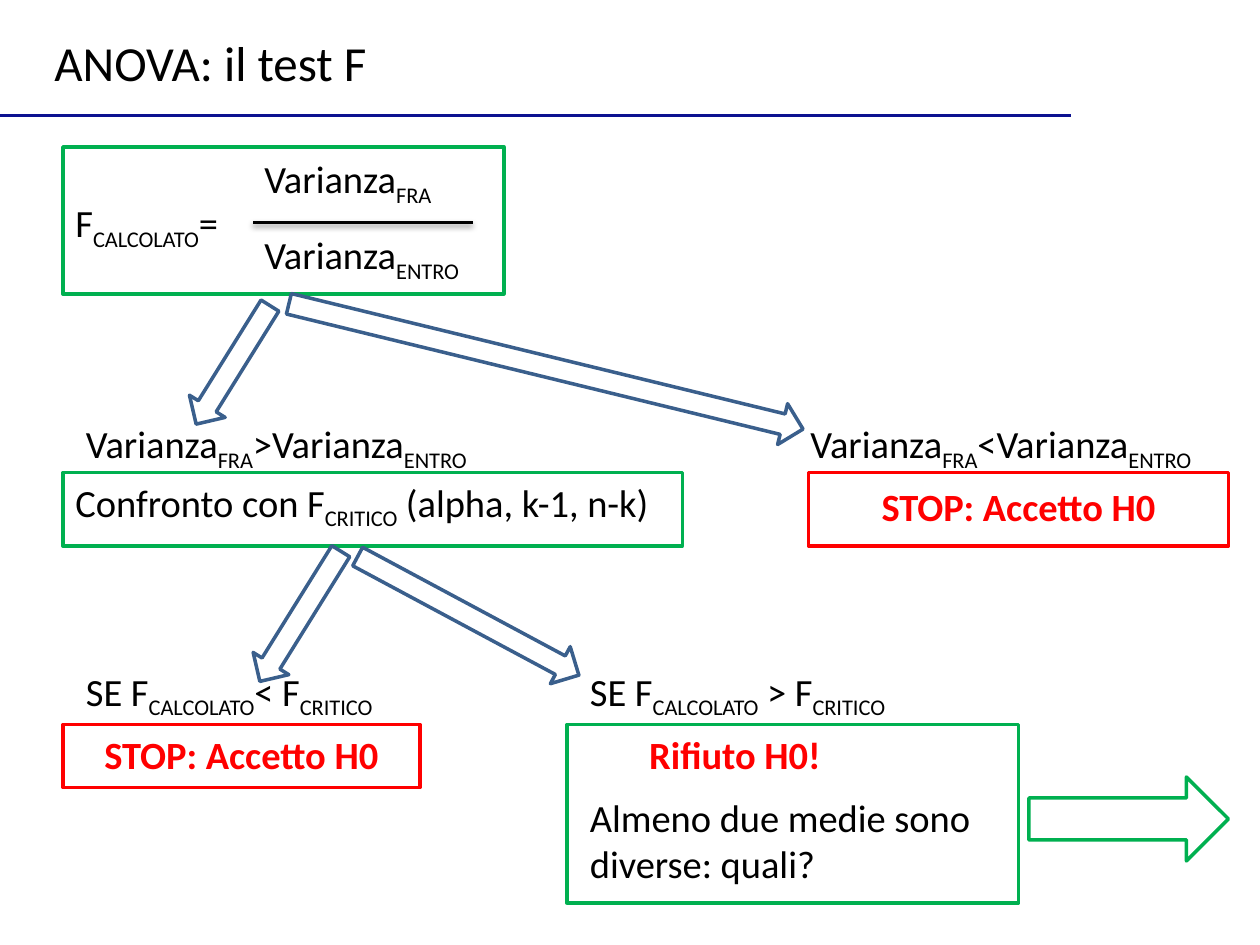
from lxml import etree
from pptx import Presentation
from pptx import util as u
from pptx.dml.color import RGBColor
from pptx.enum import shapes, text
from pptx.oxml import parse_xml
from pptx.oxml.ns import nsdecls, qn

PX = 7620
BLACK = RGBColor(0, 0, 0)
RED = RGBColor(0xFF, 0, 0)
GREEN = RGBColor(0, 0xB0, 0x50)
BLUE = RGBColor(0x3A, 0x5F, 0x8C)
NAVY = RGBColor(0x0C, 0x12, 0x90)
KIND = shapes.MSO_SHAPE
SHADE = (
    f'<a:effectLst {nsdecls("a")}>'
    '<a:outerShdw blurRad="40000" dist="20000" dir="5400000" rotWithShape="0">'
    '<a:srgbClr val="000000"><a:alpha val="38000"/></a:srgbClr>'
    '</a:outerShdw></a:effectLst>'
)


class Board:
    font = "Calibri"
    size = 22
    weight = 2
    hang = 45

    def __init__(self, wide, high):
        self.deck = Presentation()
        self.deck.slide_width = u.Emu(wide * PX)
        self.deck.slide_height = u.Emu(high * PX)
        self.slide = self.deck.slides.add_slide(self.deck.slide_layouts[6])

    def scale(self, *px):
        return [u.Emu(n * PX) for n in px]

    def words(self, box, runs, color=BLACK, size=None, bold=False,
              wrap=True, hang=False, center=False, middle=False):
        shape = self.slide.shapes.add_textbox(*self.scale(*box))
        frame = shape.text_frame
        frame.word_wrap = wrap
        frame.auto_size = text.MSO_AUTO_SIZE.SHAPE_TO_FIT_TEXT
        if middle:
            frame.vertical_anchor = text.MSO_ANCHOR.MIDDLE
        para = frame.paragraphs[0]
        if center:
            para.alignment = text.PP_ALIGN.CENTER
        if hang:
            props = para._p.get_or_add_pPr()
            props.set("marL", str(self.hang * PX))
            props.set("indent", str(-self.hang * PX))
        for spot, part in enumerate(runs):
            run = para.add_run()
            run.text = part
            run.font.name = self.font
            run.font.size = u.Pt(size or self.size)
            run.font.bold = bold
            run.font.color.rgb = color
            if spot % 2:
                run._r.get_or_add_rPr().set("baseline", "-25000")

    def verdict(self, box, label):
        self.words(box, [label], RED, bold=True, hang=True, center=True)

    def shape(self, kind, box, color, turn=0):
        item = self.slide.shapes.add_shape(kind, *self.scale(*box))
        item.shadow.inherit = False
        item.fill.background()
        item.line.color.rgb = color
        item.line.width = u.Pt(self.weight)
        item.rotation = turn

    def frame(self, box, color):
        self.shape(KIND.RECTANGLE, box, color)

    def arrow(self, box, turn):
        self.shape(KIND.DOWN_ARROW, box, BLUE, turn)

    def rule(self, left, right, top, color, shade=False):
        ends = self.scale(left, top, right, top)
        line = self.slide.shapes.add_connector(
            shapes.MSO_CONNECTOR.STRAIGHT, *ends)
        line.line.color.rgb = color
        line.line.width = u.Pt(self.weight)
        props = line._element.spPr
        if shade:
            props.append(parse_xml(SHADE))
        else:
            etree.SubElement(props, qn("a:effectLst"))


def main():
    board = Board(1200, 900)
    board.rule(0, 1020, 110, NAVY)
    board.words((40, 25, 325, 68), ["ANOVA: il test F"],
                size=28, wrap=False, middle=True)

    board.frame((60, 140, 420, 140), GREEN)
    board.words((60, 184, 200, 56), ["F", "CALCOLATO", "="], hang=True)
    for top, wide, name in ((142, 190, "FRA"), (214, 221, "ENTRO")):
        board.words((240, top, wide, 56), ["Varianza", name], wrap=False)
    board.rule(241, 450, 212, BLACK, shade=True)

    for left, sign in ((70, ">"), (760, "<")):
        board.words((left, 394, 404, 56),
                    ["Varianza", "FRA", sign + "Varianza", "ENTRO"], wrap=False)
    board.frame((60, 450, 590, 70), GREEN)
    board.words((60, 450, 610, 56),
                ["Confronto con F", "CRITICO", " (alpha, k-1, n-k)"], hang=True)
    board.frame((770, 450, 400, 70), RED)
    board.verdict((820, 454, 300, 56), "STOP: Accetto H0")

    for left, sign in ((70, "< F"), (550, " > F")):
        board.words((left, 630, 390, 56),
                    ["SE F", "CALCOLATO", sign, "CRITICO"], hang=True)
    board.frame((60, 690, 340, 60), RED)
    board.verdict((80, 690, 300, 56), "STOP: Accetto H0")
    board.frame((540, 690, 430, 170), GREEN)
    board.verdict((550, 690, 300, 56), "Rifiuto H0!")
    board.words((550, 750, 410, 101), ["Almeno due medie sono diverse: quali?"])

    for left, top, high, turn in (
        (202, 281, 133, 31.9),
        (500, 97, 504, 283.7),
        (266, 514, 146, 31.9),
        (426, 467, 239, 298.2),
    ):
        board.arrow((left, top, 40, high), turn)
    board.shape(KIND.RIGHT_ARROW, (980, 740, 190, 80), GREEN)

    board.deck.save("out.pptx")


if __name__ == "__main__":
    main()
